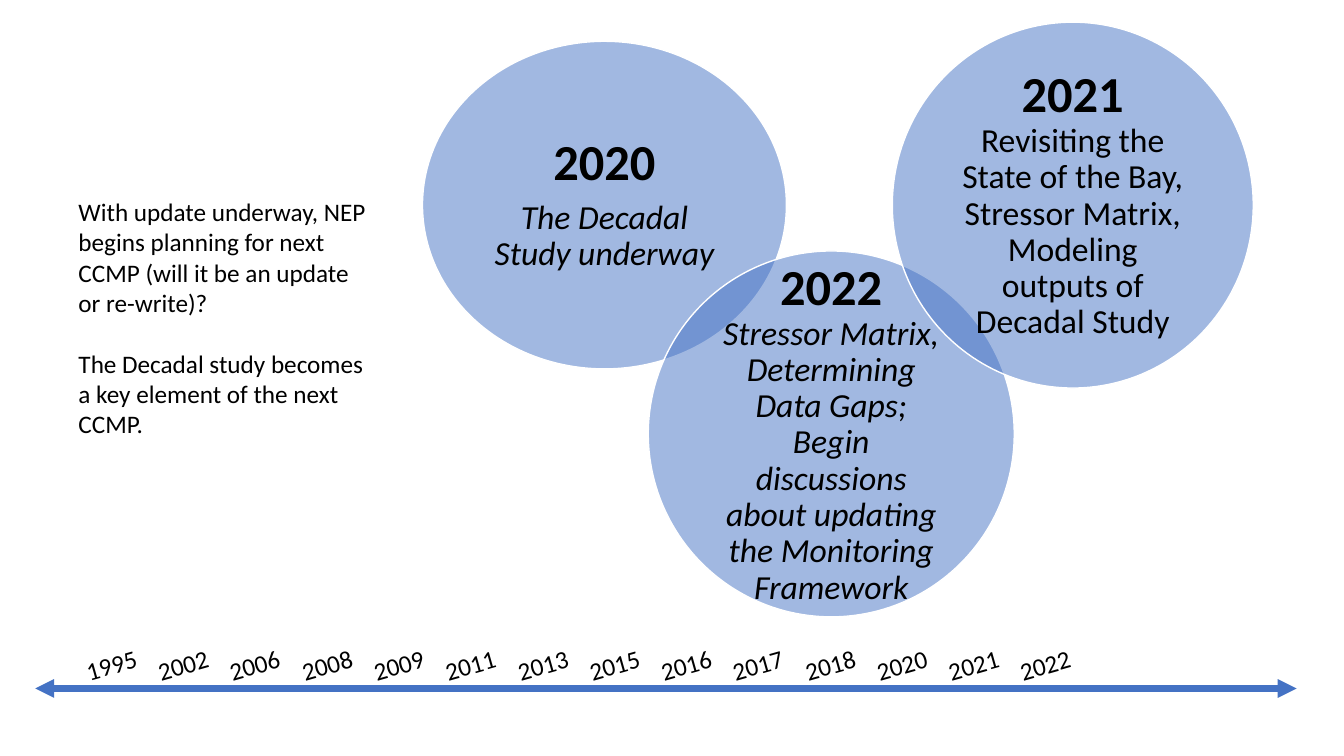
from lxml.etree import SubElement
from pptx import Presentation
from pptx.dml.color import RGBColor
from pptx.enum.shapes import MSO_CONNECTOR, MSO_SHAPE
from pptx.enum.text import MSO_ANCHOR, MSO_AUTO_SIZE, PP_ALIGN
from pptx.oxml.ns import qn
from pptx.util import Inches, Pt

BLUE, WHITE, BLACK = "4472C4", "FFFFFF", "000000"
YEARS = [1995, 2002, 2006, 2008, 2009, 2011, 2013,
         2015, 2016, 2017, 2018, 2020, 2021, 2022]
NOTES = [
    "With update underway, NEP begins planning for next CCMP (will it be an update or re-write)?",
    "The Decadal study becomes a key element of the next CCMP.",
]
PHASES = [
    {"year": "2020", "task": "The Decadal Study underway",
     "italic": True, "own_paragraph": True, "place": (4.19, 0.41, 3.61, 3.25)},
    {"year": "2022", "task": "Stressor Matrix, Determining Data Gaps; Begin discussions "
                             "about updating the Monitoring Framework",
     "italic": True, "own_paragraph": False, "place": (6.43, 2.49, 3.63, 3.63)},
    {"year": "2021", "task": "Revisiting the State of the Bay, Stressor Matrix, "
                             "Modeling outputs of Decadal Study",
     "italic": False, "own_paragraph": False, "place": (8.85, 0.22, 3.58, 3.63)},
]
YEAR_LEFT, YEAR_TOP, YEAR_STEP = 0.75, 6.38, 0.7125
YEAR_SIZE, YEAR_TILT = (0.81, 0.4), -15.8
NOTES_PLACE = (0.68, 1.9, 3.12, 2.52)
AXIS_START, AXIS_END, AXIS_Y = 0.35, 12.86, 6.83

BODY = {"size": Pt(18)}
HEADING = {"size": Pt(36), "bold": True}
CIRCLE_FRAME = {"word_wrap": True, "vertical_anchor": MSO_ANCHOR.MIDDLE,
                **{f"margin_{side}": Inches(0.15) for side in ("left", "right", "top", "bottom")}}
BOX_FRAME = {"word_wrap": True, "auto_size": MSO_AUTO_SIZE.SHAPE_TO_FIT_TEXT}
CIRCLE_PARAGRAPH = {"alignment": PP_ALIGN.CENTER, "line_spacing": 0.9, "space_after": Pt(6)}


def paint(color_format, color):
    color_format.rgb = RGBColor.from_string(color)


def apply(target, values):
    for name, value in values.items():
        setattr(target, name, value)


def add_run(paragraph, text, values):
    run = paragraph.add_run()
    run.text = text
    apply(run.font, {"name": "Calibri", **values})
    paint(run.font.color, BLACK)


def add_phase(slide, phase):
    circle = slide.shapes.add_shape(MSO_SHAPE.OVAL, *map(Inches, phase["place"]))
    circle.shadow.inherit = False
    circle.fill.solid()
    paint(circle.fill.fore_color, BLUE)
    tint = circle.fill._xPr.find(qn("a:solidFill"))[0]
    SubElement(tint, qn("a:alpha"), val="50000")
    paint(circle.line.color, WHITE)
    circle.line.width = Pt(1)
    frame = circle.text_frame
    apply(frame, CIRCLE_FRAME)
    paragraph = frame.paragraphs[0]
    apply(paragraph, CIRCLE_PARAGRAPH)
    add_run(paragraph, phase["year"], HEADING)
    if phase["own_paragraph"]:
        paragraph = frame.add_paragraph()
        apply(paragraph, CIRCLE_PARAGRAPH)
    else:
        paragraph.add_line_break()
    add_run(paragraph, phase["task"], {"size": Pt(24), "italic": phase["italic"]})


def add_box(slide, place, texts, gap=0, tilt=0):
    box = slide.shapes.add_textbox(*map(Inches, place))
    box.rotation = tilt
    frame = box.text_frame
    apply(frame, BOX_FRAME)
    for index, text in enumerate(texts):
        paragraph = frame.add_paragraph() if index else frame.paragraphs[0]
        if index < len(texts) - 1:
            paragraph.space_after = Pt(gap)
        add_run(paragraph, text, BODY)


def add_axis(slide):
    axis = slide.shapes.add_connector(
        MSO_CONNECTOR.STRAIGHT, *map(Inches, (AXIS_START, AXIS_Y, AXIS_END, AXIS_Y)))
    paint(axis.line.color, BLUE)
    axis.line.width = Pt(4.5)
    outline = axis.line._get_or_add_ln()
    for end in ("a:headEnd", "a:tailEnd"):
        SubElement(outline, qn(end), type="triangle")
    SubElement(axis._element.spPr, qn("a:effectLst"))


def main():
    """Build the study timeline slide and save it."""
    deck = Presentation()
    deck.slide_width, deck.slide_height = Inches(13.33), Inches(7.5)
    slide = deck.slides.add_slide(deck.slide_layouts[6])
    for phase in PHASES:
        add_phase(slide, phase)
    add_axis(slide)
    for index, year in enumerate(YEARS):
        left = round(YEAR_LEFT + index * YEAR_STEP, 2)
        add_box(slide, (left, YEAR_TOP, *YEAR_SIZE), [str(year)], tilt=YEAR_TILT)
    add_box(slide, NOTES_PLACE, NOTES, gap=22)
    deck.save("out.pptx")


if __name__ == "__main__":
    main()
